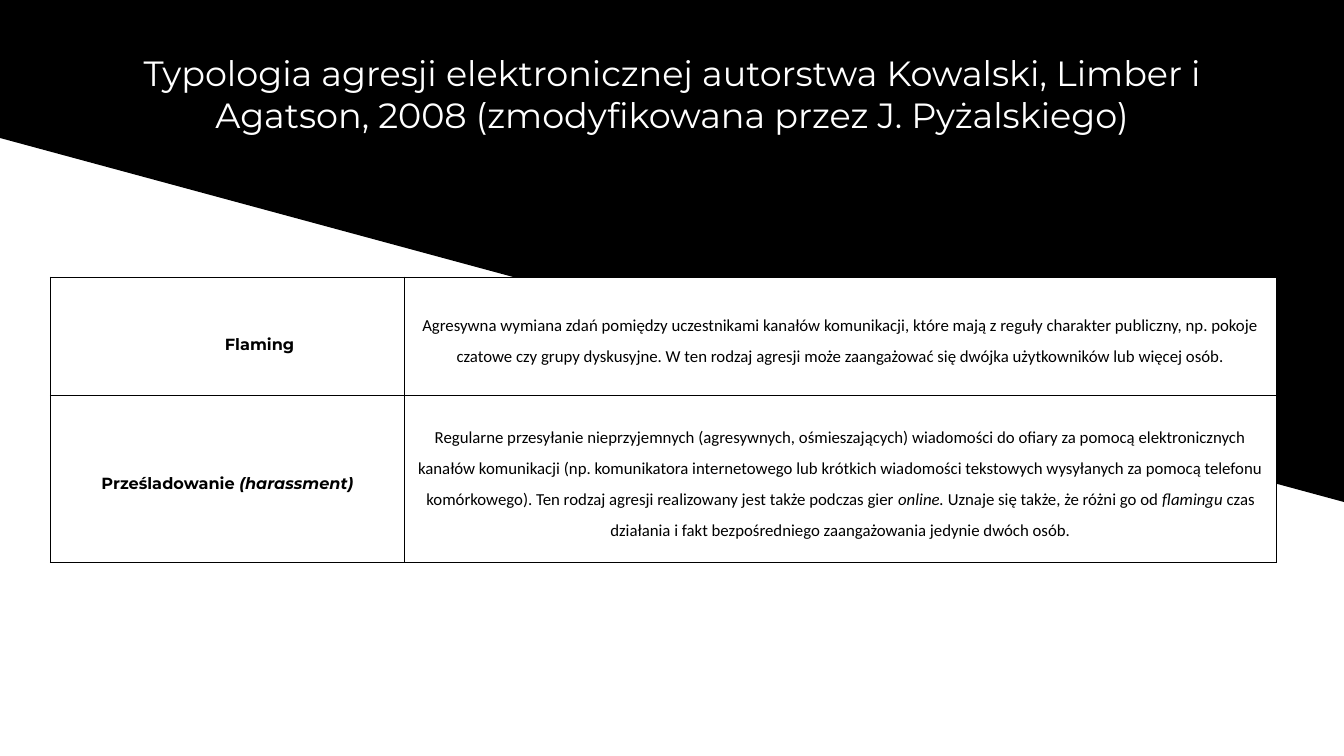
from dataclasses import dataclass

from lxml import etree
from pptx import Presentation
from pptx.dml.color import RGBColor
from pptx.enum.text import MSO_ANCHOR, PP_ALIGN
from pptx.oxml.ns import qn
from pptx.slide import Slide
from pptx.table import _Cell
from pptx.util import Length, Pt

CENTER = PP_ALIGN.CENTER
MIDDLE = MSO_ANCHOR.MIDDLE
COLORS = {"black": "000000", "white": "FFFFFF"}
TITLE = (
    "Typologia agresji elektronicznej autorstwa Kowalski, Limber i "
    "Agatson, 2008 (zmodyfikowana przez J. Pyżalskiego)"
)
COLUMN_WIDTHS = (252.9, 623)
ROW_HEIGHTS = (84.6, 119.4)
BORDER_SIDES = ("a:lnL", "a:lnR", "a:lnT", "a:lnB")


@dataclass
class Phrase:
    text: str
    italic: bool = False


@dataclass
class CellText:
    phrases: list[Phrase]
    font: str
    size: float
    bold: bool
    spacing: Length | float
    indent: float = 0


def term(phrases: list[Phrase], spacing: float, indent: float = 0) -> CellText:
    return CellText(phrases, "Montserrat", 11.5, True, Pt(spacing), indent)


def definition(phrases: list[Phrase]) -> CellText:
    return CellText(phrases, "Calibri", 12, False, 1.5)


ROWS = [
    (
        term([Phrase("Flaming")], 25.4, 46),
        definition([
            Phrase(
                "Agresywna wymiana zdań pomiędzy uczestnikami kanałów komunikacji, "
                "które mają z reguły charakter publiczny, np. pokoje czatowe czy grupy "
                "dyskusyjne. W ten rodzaj agresji może zaangażować się dwójka "
                "użytkowników lub więcej osób."
            )
        ]),
    ),
    (
        term([Phrase("Prześladowanie "), Phrase("(harassment)", True)], 20.6),
        definition([
            Phrase(
                "Regularne przesyłanie nieprzyjemnych (agresywnych, ośmieszających) "
                "wiadomości do ofiary za pomocą elektronicznych kanałów komunikacji "
                "(np. komunikatora internetowego lub krótkich wiadomości tekstowych "
                "wysyłanych za pomocą telefonu komórkowego). Ten rodzaj agresji "
                "realizowany jest także podczas gier"
            ),
            Phrase(" online.", True),
            Phrase(" Uznaje się także, że różni go od"),
            Phrase(" flamingu", True),
            Phrase(
                " czas działania i fakt bezpośredniego zaangażowania jedynie dwóch osób."
            ),
        ]),
    ),
]


def rgb(name: str) -> RGBColor:
    return RGBColor.from_string(COLORS[name])


def draw_backdrop(s: Slide) -> None:
    builder = s.shapes.build_freeform(Pt(0), Pt(-1.4))
    corners = [(960, -1.4), (960, 358.6), (0, 98.6)]
    builder.add_line_segments([(Pt(x), Pt(y)) for x, y in corners], close=True)
    sp = builder.convert_to_shape()
    sp.shadow.inherit = False
    sp.fill.solid()
    sp.fill.fore_color.rgb = rgb("black")
    sp.line.fill.background()


def draw_title(s: Slide) -> None:
    sp = s.shapes.title
    s.shapes._spTree.append(sp._element)
    sp.left, sp.top, sp.width, sp.height = Pt(48), Pt(21.6), Pt(864), Pt(90)
    tf = sp.text_frame
    tf.text = TITLE
    tf.word_wrap = True
    tf.vertical_anchor = MIDDLE
    p = tf.paragraphs[0]
    p.alignment = CENTER
    font = p.runs[0].font
    font.name, font.size = "Montserrat", Pt(25)
    font.color.rgb = rgb("white")


def add_borders(cell: _Cell) -> None:
    tc_pr = cell._tc.get_or_add_tcPr()
    for side in BORDER_SIDES:
        ln = etree.SubElement(tc_pr, qn(side), w=str(Pt(1)))
        fill = etree.SubElement(ln, qn("a:solidFill"))
        etree.SubElement(fill, qn("a:srgbClr"), val=COLORS["black"])


def fill_cell(cell: _Cell, content: CellText) -> None:
    add_borders(cell)
    cell.fill.solid()
    cell.fill.fore_color.rgb = rgb("white")
    cell.vertical_anchor = MIDDLE
    cell.margin_left = cell.margin_right = cell.margin_top = cell.margin_bottom = 0
    p = cell.text_frame.paragraphs[0]
    p.alignment = CENTER
    p.line_spacing = content.spacing
    if content.indent:
        p._p.get_or_add_pPr().set("marL", str(Pt(content.indent)))
    for phrase in content.phrases:
        r = p.add_run()
        r.text = phrase.text
        r.font.name, r.font.size = content.font, Pt(content.size)
        r.font.bold, r.font.italic = content.bold, phrase.italic
        r.font.color.rgb = rgb("black")


def draw_table(s: Slide) -> None:
    frame = s.shapes.add_table(
        len(ROWS), len(COLUMN_WIDTHS), Pt(36), Pt(198),
        Pt(sum(COLUMN_WIDTHS)), Pt(sum(ROW_HEIGHTS)),
    )
    table = frame.table
    table.first_row = table.horz_banding = False
    for column, width in zip(table.columns, COLUMN_WIDTHS):
        column.width = Pt(width)
    for row, height, contents in zip(table.rows, ROW_HEIGHTS, ROWS):
        row.height = Pt(height)
        for cell, content in zip(row.cells, contents):
            fill_cell(cell, content)


def main() -> None:
    prs = Presentation()
    prs.slide_width, prs.slide_height = Pt(960), Pt(540)
    s = prs.slides.add_slide(prs.slide_layouts[5])
    draw_backdrop(s)
    draw_title(s)
    draw_table(s)
    prs.save("out.pptx")


if __name__ == "__main__":
    main()
